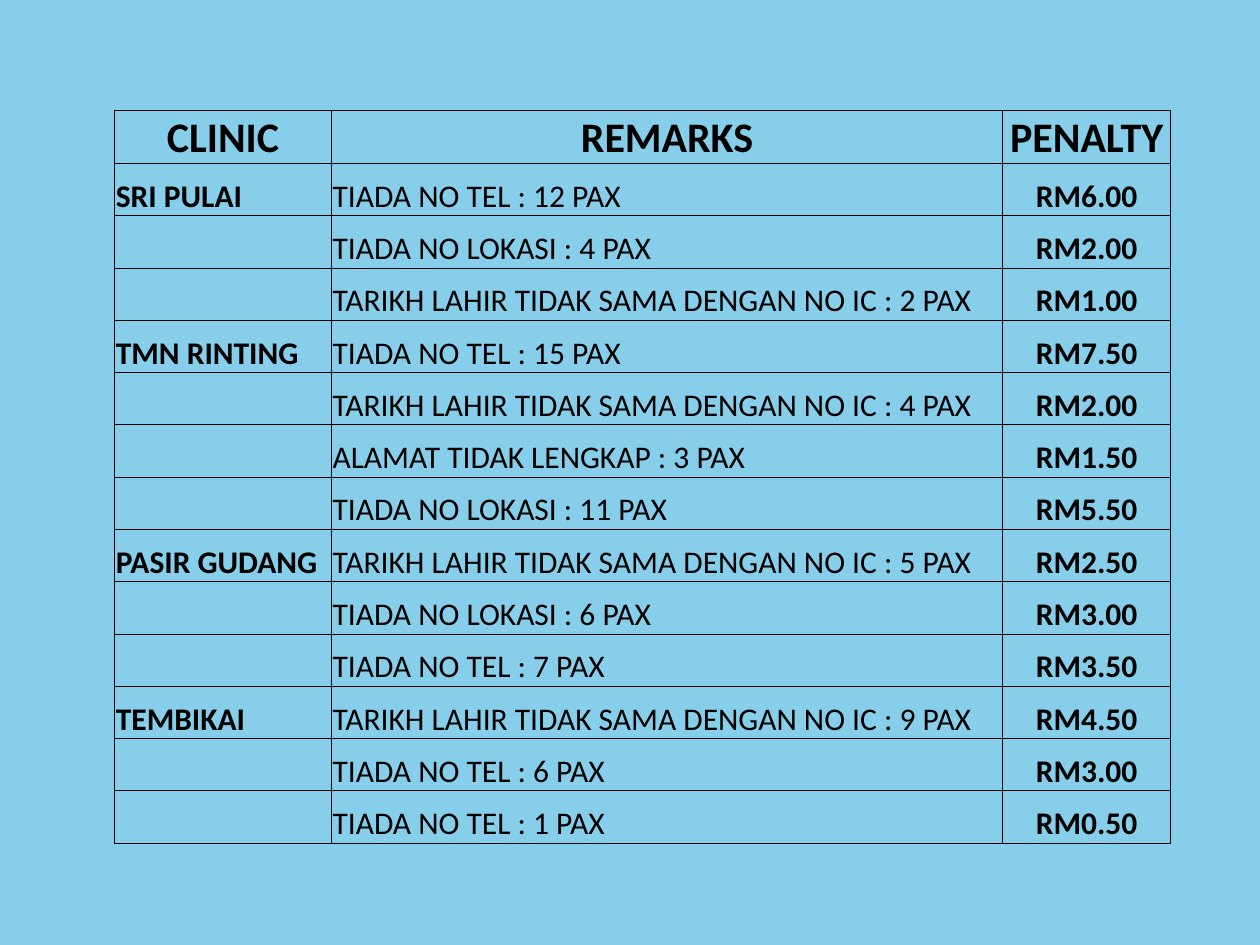
from lxml.etree import SubElement
from pptx import Presentation
from pptx.dml.color import RGBColor
from pptx.enum.text import MSO_ANCHOR, PP_ALIGN
from pptx.oxml.ns import qn
from pptx.util import Inches, Pt

SKY = RGBColor(0x87, 0xCE, 0xEB)
BLACK = RGBColor(0, 0, 0)

HEADINGS = ("CLINIC", "REMARKS", "PENALTY")
BAD_BIRTH_DATE = "TARIKH LAHIR TIDAK SAMA DENGAN NO IC"
NO_PHONE = "TIADA NO TEL"
NO_LOCATION = "TIADA NO LOKASI"
CLINICS = {
    "SRI PULAI": [(NO_PHONE, 12, "6.00"), (NO_LOCATION, 4, "2.00"),
                  (BAD_BIRTH_DATE, 2, "1.00")],
    "TMN RINTING": [(NO_PHONE, 15, "7.50"), (BAD_BIRTH_DATE, 4, "2.00"),
                    ("ALAMAT TIDAK LENGKAP", 3, "1.50"),
                    (NO_LOCATION, 11, "5.50")],
    "PASIR GUDANG": [(BAD_BIRTH_DATE, 5, "2.50"), (NO_LOCATION, 6, "3.00"),
                     (NO_PHONE, 7, "3.50")],
    "TEMBIKAI": [(BAD_BIRTH_DATE, 9, "4.50"), (NO_PHONE, 6, "3.00"),
                 (NO_PHONE, 1, "0.50")],
}
COLUMN_WIDTHS = (1.72, 5.33, 1.33)
CELL_FORMAT = {
    "vertical_anchor": MSO_ANCHOR.BOTTOM,
    "margin_left": Inches(0.01),
    "margin_right": Inches(0.01),
    "margin_top": Inches(0.01),
    "margin_bottom": 0,
}


def add_borders(cell):
    properties = cell._tc.get_or_add_tcPr()
    for index, side in enumerate(("lnL", "lnR", "lnT", "lnB")):
        line = SubElement(properties, qn(f"a:{side}"), w=str(Pt(0.5)))
        fill = SubElement(line, qn("a:solidFill"))
        SubElement(fill, qn("a:srgbClr"), val=str(BLACK))
        properties.insert(index, line)  # borders come before the fill


deck = Presentation()
deck.slide_width, deck.slide_height = Inches(10), Inches(7.5)
page = deck.slides.add_slide(deck.slide_layouts[6])
page.background.fill.solid()
page.background.fill.fore_color.rgb = SKY

rows = [HEADINGS]
for clinic, faults in CLINICS.items():
    for index, (fault, count, penalty) in enumerate(faults):
        name = clinic if index == 0 else ""
        rows.append((name, f"{fault} : {count} PAX", f"RM{penalty}"))

table = page.shapes.add_table(
    len(rows), len(HEADINGS), Inches(0.91), Inches(0.88),
    Inches(sum(COLUMN_WIDTHS)), Inches(5.81)).table
table.first_row = table.horz_banding = False
for column, width in zip(table.columns, COLUMN_WIDTHS):
    column.width = Inches(width)

for row_index, texts in enumerate(rows):
    is_heading = row_index == 0
    for column_index, text in enumerate(texts):
        cell = table.cell(row_index, column_index)
        cell.fill.background()
        add_borders(cell)
        for key, value in CELL_FORMAT.items():
            setattr(cell, key, value)
        cell.text = text
        para = cell.text_frame.paragraphs[0]
        centred = is_heading or column_index == 2
        para.alignment = PP_ALIGN.CENTER if centred else PP_ALIGN.LEFT
        font_format = {
            "name": "Calibri",
            "size": Pt(24 if is_heading else 18),
            "bold": is_heading or column_index != 1,
        }
        for key, value in font_format.items():
            setattr(para.font, key, value)
        para.font.color.rgb = BLACK

deck.save("out.pptx")
